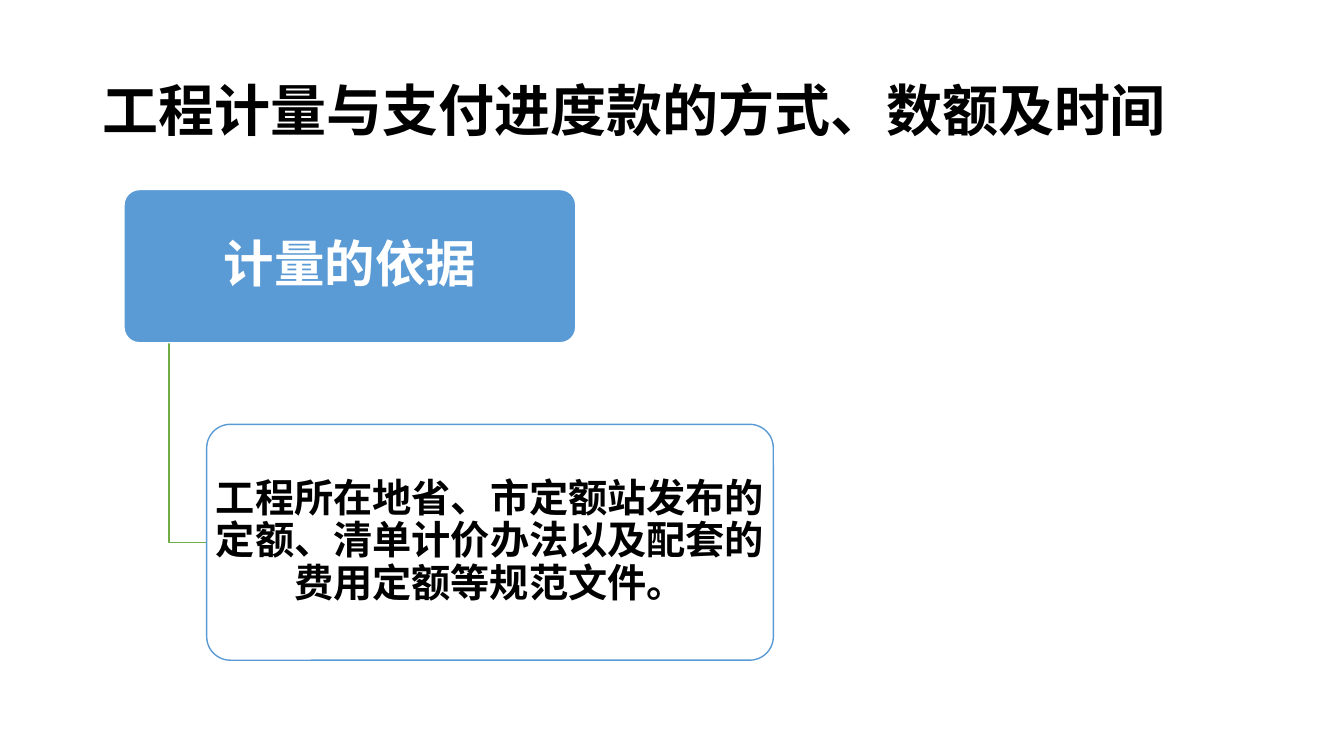
"""Build a slide with a measurement heading and the rule that hangs below it."""
from lxml.etree import SubElement
from pptx import Presentation
from pptx.dml.color import RGBColor as Color
from pptx.enum.shapes import MSO_SHAPE as Preset
from pptx.enum.text import MSO_ANCHOR as Anchor, MSO_AUTO_SIZE as AutoSize, PP_ALIGN as Align
from pptx.oxml.ns import qn
from pptx.util import Inches, Pt

THEME = {
    "font": "Times New Roman",
    "black": Color.from_string("000000"),
    "white": Color.from_string("FFFFFF"),
    "blue": Color.from_string("5B9BD5"),
    "green": Color.from_string("70AD47"),
    "title": Pt(40),
    "heading": Pt(36),
    "detail": Pt(28),
    "line": Pt(1),
}

presentation = Presentation()
presentation.slide_width, presentation.slide_height = Inches(13.33), Inches(7.5)
slide = presentation.slides.add_slide(presentation.slide_layouts[5])


def place(left, top, width, height):
    """Turn percentages of the slide into a box of lengths."""
    across, down = presentation.slide_width / 100, presentation.slide_height / 100
    return {"left": round(left * across), "top": round(top * down),
            "width": round(width * across), "height": round(height * down)}


def write(shape, text, size, color, align):
    """Put one bold paragraph into a shape."""
    frame = shape.text_frame
    frame.text = text
    paragraph = frame.paragraphs[0]
    formats = (
        (frame, {"word_wrap": True, "auto_size": AutoSize.NONE, "vertical_anchor": Anchor.MIDDLE}),
        (paragraph, {"alignment": align, "line_spacing": 0.9}),
        (paragraph.runs[0].font, {"name": THEME["font"], "size": size, "bold": True}),
    )
    for target, values in formats:
        for name, value in values.items():
            setattr(target, name, value)
    paragraph.runs[0].font.color.rgb = color


title = slide.shapes.title
for name, value in place(6.9, 5.33, 86.27, 19.33).items():
    setattr(title, name, value)
write(title, "工程计量与支付进度款的方式、数额及时间", THEME["title"], THEME["black"], Align.LEFT)

heading_box = place(9.23, 25.07, 33.61, 20.27)
detail_box = place(15.38, 56.13, 42.16, 31.2)

stem = heading_box["left"] + heading_box["width"] // 10
heading_bottom = heading_box["top"] + heading_box["height"]
detail_middle = detail_box["top"] + detail_box["height"] // 2
builder = slide.shapes.build_freeform(stem, heading_bottom)
builder.add_line_segments([(stem, detail_middle), (detail_box["left"], detail_middle)], close=False)
elbow = builder.convert_to_shape()
elbow.shadow.inherit = False
elbow.fill.background()
elbow.line.color.rgb = THEME["green"]
elbow.line.width = THEME["line"]

cards = (
    (heading_box, "计量的依据", "heading", "blue", "white", "white", 100),
    (detail_box, "工程所在地省、市定额站发布的定额、清单计价办法以及配套的费用定额等规范文件。",
     "detail", "white", "blue", "black", 90),
)
for box, text, size, fill, line, ink, opacity in cards:
    card = slide.shapes.add_shape(Preset.ROUNDED_RECTANGLE, **box)
    card.adjustments[0] = 0.1
    card.shadow.inherit = False
    card.fill.solid()
    card.fill.fore_color.rgb = THEME[fill]
    if opacity < 100:
        solid = card.element.spPr.find(qn("a:solidFill"))
        SubElement(solid[0], qn("a:alpha"), val=str(opacity * 1000))
    card.line.color.rgb = THEME[line]
    card.line.width = THEME["line"]
    for side in ("left", "top", "right", "bottom"):
        setattr(card.text_frame, f"margin_{side}", 0)
    write(card, text, THEME[size], THEME[ink], Align.CENTER)

presentation.save("out.pptx")
